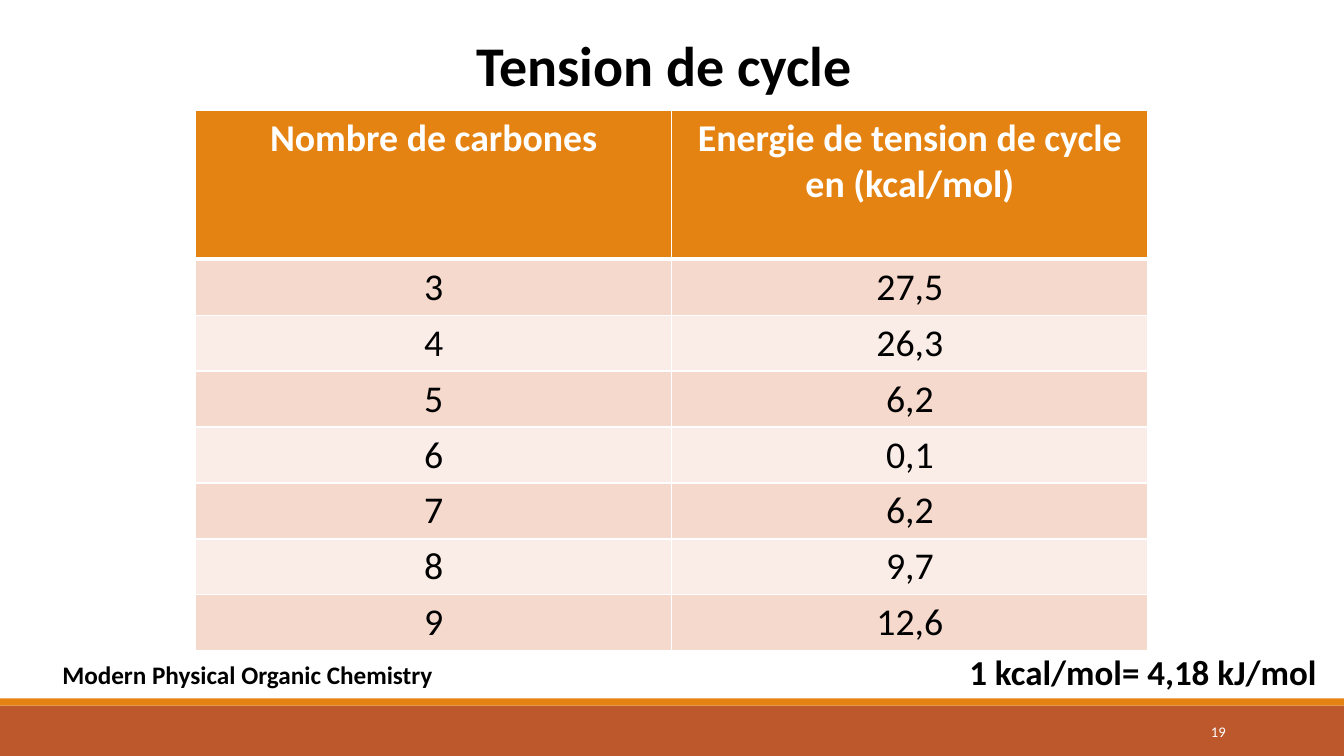
import pptx
import pptx.util
import pptx.dml.color
import pptx.enum.shapes
import pptx.enum.text
import pptx.oxml
import pptx.oxml.ns

Cm, Pt = pptx.util.Cm, pptx.util.Pt
ALIGN = pptx.enum.text.PP_ALIGN
ANCHOR = pptx.enum.text.MSO_ANCHOR

# Content
TITLE = "Tension de cycle"
HEADER = ("Nombre de carbones", "Energie de tension de cycle en (kcal/mol)")
STRAIN = [
    ("3", "27,5"),
    ("4", "26,3"),
    ("5", "6,2"),
    ("6", "0,1"),
    ("7", "6,2"),
    ("8", "9,7"),
    ("9", "12,6"),
]
CONVERSION = "1 kcal/mol= 4,18 kJ/mol"
REFERENCE = "Modern Physical Organic Chemistry"
PAGE_NUMBER = "19"

FONT = "Calibri"
COLORS = {
    "text": "000000",
    "white": "FFFFFF",
    "orange": "E48312",
    "rust": "BD582C",
    "odd": "F5D9CC",
    "even": "FAEDE7",
}

# Layout in centimetres
WIDTH, HEIGHT = 33.87, 19.05
FOOTER_TOP, STRIPE_TOP = 17.78, 17.6
COLUMN_WIDTH, HEADER_HEIGHT, ROW_HEIGHT = 12, 3.74, 1.41


def rgb(name):
    return pptx.dml.color.RGBColor.from_string(COLORS[name])


def write(frame, text, size, color="text", bold=True, align=ALIGN.LEFT):
    frame.text = text
    para = frame.paragraphs[0]
    para.alignment = align
    for span in para.runs:
        span.font.name = FONT
        span.font.size = Pt(size)
        span.font.bold = bold
        span.font.color.rgb = rgb(color)


def add_band(page, top, height, color):
    band = page.shapes.add_shape(
        pptx.enum.shapes.MSO_SHAPE.RECTANGLE, 0, Cm(top), Cm(WIDTH), Cm(height))
    band.shadow.inherit = False
    band.fill.solid()
    band.fill.fore_color.rgb = rgb(color)
    band.line.fill.background()


def add_label(page, place, text, size, **style):
    box = page.shapes.add_textbox(*map(Cm, place))
    box.text_frame.word_wrap = True
    write(box.text_frame, text, size, **style)
    return box


def set_borders(cell, bottom, top):
    props = cell._tc.get_or_add_tcPr()
    sides = (("lnL", 1), ("lnR", 1), ("lnT", top), ("lnB", bottom))
    for index, (side, points) in enumerate(sides):
        props.insert(index, pptx.oxml.parse_xml(
            f'<a:{side} {pptx.oxml.ns.nsdecls("a")} w="{Pt(points)}"><a:solidFill>'
            f'<a:srgbClr val="{COLORS["white"]}"/></a:solidFill></a:{side}>'))


def add_strain_table(page):
    rows = [HEADER] + STRAIN
    table = page.shapes.add_table(
        len(rows), len(HEADER), Cm(4.93), Cm(2.79), Cm(COLUMN_WIDTH * len(HEADER)),
        Cm(HEADER_HEIGHT + ROW_HEIGHT * len(STRAIN))).table
    for column in table.columns:
        column.width = Cm(COLUMN_WIDTH)
    for r, values in enumerate(rows):
        heading = r == 0
        table.rows[r].height = Cm(HEADER_HEIGHT if heading else ROW_HEIGHT)
        fill = "orange" if heading else ("even", "odd")[r % 2]
        for c, value in enumerate(values):
            cell = table.cell(r, c)
            cell.fill.solid()
            cell.fill.fore_color.rgb = rgb(fill)
            set_borders(cell, bottom=3 if heading else 1, top=3 if r == 1 else 1)
            write(cell.text_frame, value, 27, "white" if heading else "text",
                  heading, ALIGN.CENTER)


def main():
    deck = pptx.Presentation()
    deck.slide_width, deck.slide_height = Cm(WIDTH), Cm(HEIGHT)
    page = deck.slides.add_slide(deck.slide_layouts[5])

    # Footer bands and page number
    add_band(page, FOOTER_TOP, HEIGHT - FOOTER_TOP, "rust")
    add_band(page, STRIPE_TOP, FOOTER_TOP - STRIPE_TOP, "orange")
    number = add_label(page, (27.51, 17.93, 3.63, 1.02), PAGE_NUMBER, 10.5,
                       color="white", bold=False, align=ALIGN.RIGHT)
    number.text_frame.vertical_anchor = ANCHOR.MIDDLE

    # Title
    title = page.shapes.title
    title.left, title.top, title.width, title.height = map(Cm, (11.76, 0.64, 19.15, 1.96))
    title.text_frame.vertical_anchor = ANCHOR.TOP
    write(title.text_frame, TITLE, 40)

    # Table and notes below it
    add_strain_table(page)
    add_label(page, (24.18, 16.26, 9.65, 1.32), CONVERSION, 25)
    add_label(page, (1.32, 16.48, 17.25, 1.02), REFERENCE, 18)

    deck.save("out.pptx")


if __name__ == "__main__":
    main()
